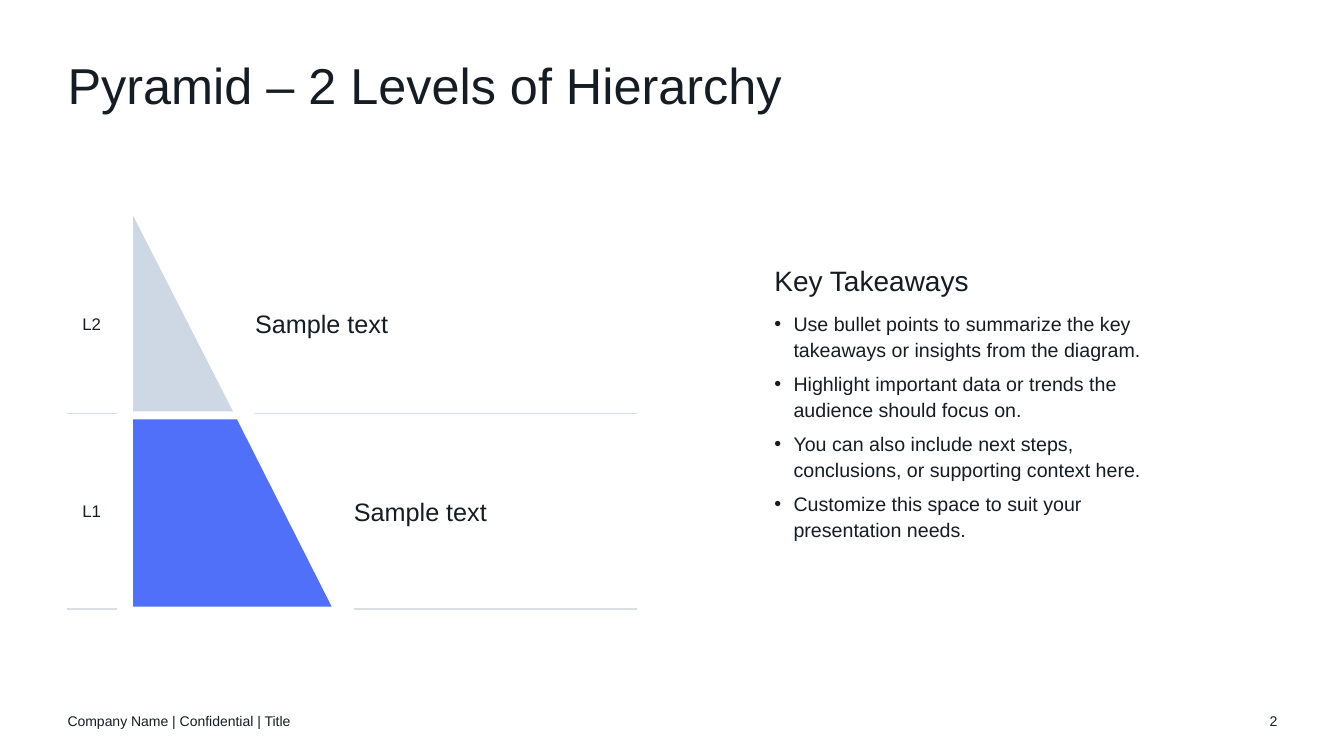
from collections import namedtuple

from lxml.etree import SubElement
from pptx import Presentation
from pptx.dml.color import RGBColor
from pptx.enum.shapes import MSO_CONNECTOR
from pptx.enum.text import MSO_ANCHOR, PP_ALIGN
from pptx.oxml.ns import qn
from pptx.util import Emu, Pt

PX = 9144  # 100 px to the inch
FONT = "Arial"
INK = RGBColor(0x15, 0x1C, 0x23)
RULE = RGBColor(0xD9, 0xDE, 0xE5)
PALE = RGBColor(0xCE, 0xD8, 0xE4)
BLUE = RGBColor(0x50, 0x70, 0xFA)

Box = namedtuple("Box", "left top width height")
Level = namedtuple("Level", "name text color top bottom top_width bottom_width text_top rule_y text_left")

LEVELS = [
    Level("L2", "Sample text", PALE, 0, 194, 0, 99, 92, 196, 187),
    Level("L1", "Sample text", BLUE, 202, 388, 103, 197, 278, 390, 285),
]
TAKEAWAYS = [
    "Use bullet points to summarize the key takeaways or insights from the diagram.",
    "Highlight important data or trends the audience should focus on.",
    "You can also include next steps, conclusions, or supporting context here.",
    "Customize this space to suit your presentation needs.",
]


def px(length):
    return Emu(length * PX)


def set_values(target, values):
    for name, value in values.items():
        setattr(target, name, value)


def prepare_frame(frame, anchor):
    set_values(frame, {
        "word_wrap": True, "vertical_anchor": anchor,
        "margin_left": 0, "margin_right": 0, "margin_top": 0, "margin_bottom": 0,
    })


def write(para, text, size, **para_format):
    set_values(para, para_format)
    span = para.add_run()
    span.text = text
    set_values(span.font, {"name": FONT, "size": Pt(size)})
    span.font.color.rgb = INK


def add_frame(slide, box):
    frame = slide.shapes.add_textbox(*map(px, box)).text_frame
    prepare_frame(frame, MSO_ANCHOR.MIDDLE)
    return frame


def add_label(slide, box, text, size, alignment=PP_ALIGN.LEFT):
    write(add_frame(slide, box).paragraphs[0], text, size, alignment=alignment)


def add_rule(slide, left, right, y):
    rule = slide.shapes.add_connector(MSO_CONNECTOR.STRAIGHT, px(left), px(y), px(right), px(y))
    rule.line.color.rgb = RULE
    rule.line.width = Pt(1)
    SubElement(rule._element.spPr, qn("a:effectLst"))


def add_bullet(para, indent):
    """Give the paragraph a round bullet with a hanging indent."""
    properties = para._p.get_or_add_pPr()
    properties.set("marL", str(px(indent)))
    properties.set("indent", str(-px(indent)))
    SubElement(properties, qn("a:buFont"), typeface=FONT)
    SubElement(properties, qn("a:buChar"), char="•")


def add_title(slide, box, text):
    title = slide.shapes.title
    set_values(title, dict(zip(box._fields, map(px, box))))
    prepare_frame(title.text_frame, MSO_ANCHOR.TOP)
    write(title.text_frame.paragraphs[0], text, 36, alignment=PP_ALIGN.LEFT, line_spacing=0.9)


def add_level(slide, box, level):
    """Draw one pyramid level with its name, text and rules inside the box."""
    edge = box.left + 66
    top, bottom = box.top + level.top, box.top + level.bottom
    builder = slide.shapes.build_freeform(edge, top, scale=PX)
    builder.add_line_segments([
        (edge, bottom), (edge + level.bottom_width, bottom), (edge + level.top_width, top),
    ])
    block = builder.convert_to_shape()
    block.shadow.inherit = False
    block.fill.solid()
    block.fill.fore_color.rgb = level.color
    block.line.fill.background()

    text_left = box.left + level.text_left
    text_top = box.top + level.text_top
    rule_y = box.top + level.rule_y
    add_rule(slide, box.left, box.left + 50, rule_y)
    add_rule(slide, text_left, box.left + box.width, rule_y)
    add_label(slide, Box(box.left + 5, text_top, 40, 30), level.name, 12, PP_ALIGN.CENTER)
    add_label(slide, Box(text_left, text_top, 280, 30), level.text, 18)


def add_pyramid(slide, box):
    for level in LEVELS:
        add_level(slide, box, level)


def add_takeaways(slide, box):
    frame = add_frame(slide, box)
    spacing = {"line_spacing": 1.1, "space_before": Pt(6)}
    write(frame.paragraphs[0], "Key Takeaways", 20, space_after=Pt(3), **spacing)
    for takeaway in TAKEAWAYS:
        para = frame.add_paragraph()
        write(para, takeaway, 14, **spacing)
        add_bullet(para, 19)


def add_footer(slide, box):
    number_width = 50
    number_left = box.left + box.width - number_width
    add_label(slide, box._replace(width=450), "Company Name | Confidential | Title", 10)
    add_label(slide, box._replace(left=number_left, width=number_width), "2", 10, PP_ALIGN.RIGHT)


def main():
    deck = Presentation()
    set_values(deck, {"slide_width": px(1333), "slide_height": px(750)})
    slide = deck.slides.add_slide(deck.slide_layouts.get_by_name("Title Only"))
    add_title(slide, Box(67, 60, 1200, 60), "Pyramid – 2 Levels of Hierarchy")
    add_pyramid(slide, Box(66, 214, 566, 390))
    add_takeaways(slide, Box(768, 180, 399, 435))
    add_footer(slide, Box(67, 695, 1200, 40))
    deck.save("out.pptx")


if __name__ == "__main__":
    main()
